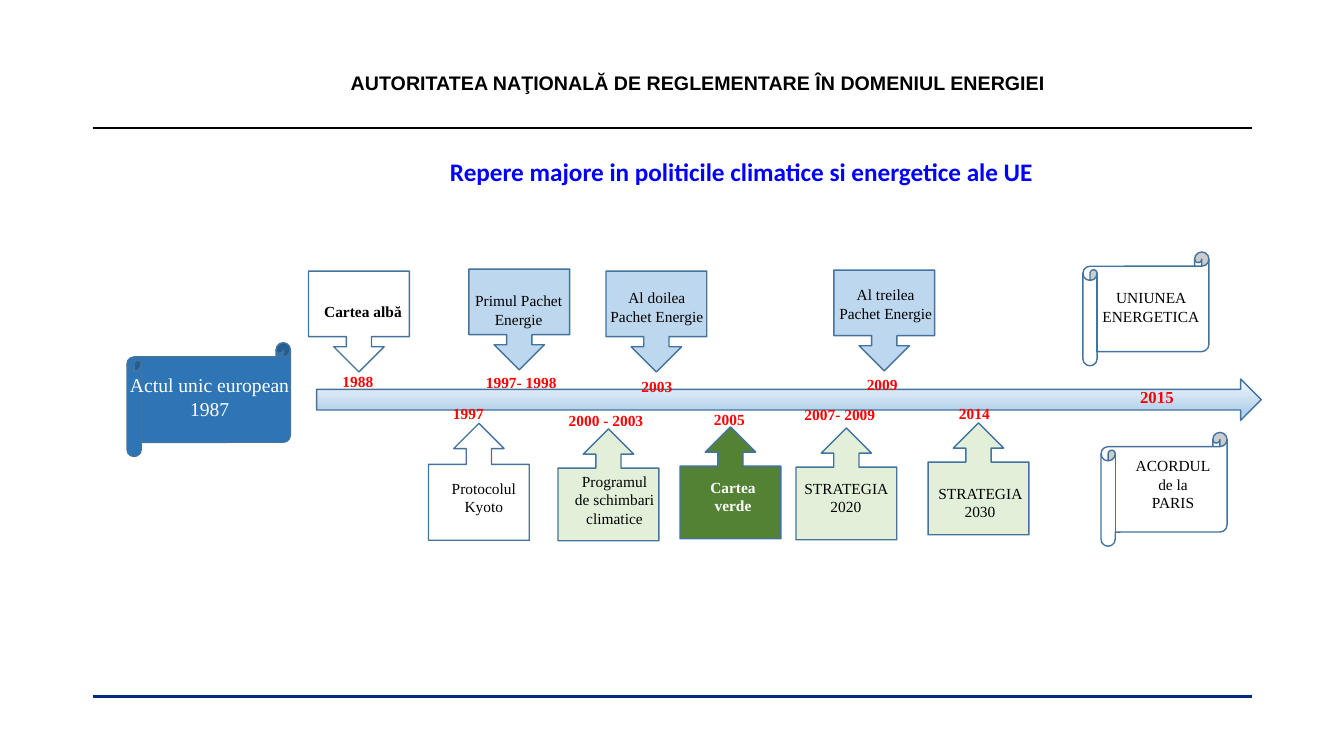
import pptx
import pptx.util
import pptx.dml.color
import pptx.enum.shapes
import pptx.enum.text
import pptx.oxml.ns
from lxml import etree

Inches = pptx.util.Inches
Pt = pptx.util.Pt
RGBColor = pptx.dml.color.RGBColor
KINDS = pptx.enum.shapes.MSO_SHAPE
ALIGN = pptx.enum.text.PP_ALIGN
qn = pptx.oxml.ns.qn

BLACK = RGBColor(0x00, 0x00, 0x00)
WHITE = RGBColor(0xFF, 0xFF, 0xFF)
RED = RGBColor(0xFF, 0x00, 0x00)
BLUE = RGBColor(0x00, 0x00, 0xFF)
NAVY = RGBColor(0x00, 0x2B, 0x7F)
EDGE = RGBColor(0x43, 0x73, 0x9E)
SKY = RGBColor(0xBD, 0xD7, 0xEE)
MINT = RGBColor(0xE2, 0xF0, 0xD9)
GREEN = RGBColor(0x54, 0x82, 0x35)
DEEP = RGBColor(0x2E, 0x75, 0xB6)

RULES = [(1.27, BLACK, 1), (6.91, NAVY, 2)]
DOWN, UP = 90, 270
CALLS = [
    (DOWN, 3.06, 2.69, 1, None),
    (DOWN, 4.65, 2.67, 1, SKY),
    (DOWN, 6.01, 2.69, 1, SKY),
    (DOWN, 8.27, 2.68, 1, SKY),
    (UP, 4.17, 4.28, 1.16, None),
    (UP, 5.48, 4.31, 1.11, MINT),
    (UP, 6.69, 4.29, 1.11, GREEN),
    (UP, 7.84, 4.3, 1.11, MINT),
    (UP, 9.15, 4.25, 1.11, MINT),
]
SCROLLS = [
    (1.26, 3.4, 1.62, DEEP),
    (10.74, 2.5, 1.25, WHITE),
    (10.92, 4.29, 1.25, WHITE),
]
AXIS = (3.14, 3.76, 9.37, 0.41)
STOPS = [(0, "F7FAFD"), (37, "D6E6F5"), (74, "B5D2EC"),
         (83, "B5D2EC"), (100, "CEE1F2")]

PLAIN = {"name": "Times New Roman", "size": Pt(11), "bold": False}
BOLD = {**PLAIN, "bold": True}
LARGE = {**PLAIN, "size": Pt(14)}
LAST = {**BOLD, "size": Pt(12)}
HEAD = {"name": "Arial", "size": Pt(14), "bold": True}
TITLE = {"name": "Calibri", "size": Pt(18), "bold": True}

LABELS = [
    ("Cartea albă", 3.09, 2.95, 1.02, BOLD, BLACK),
    ("Primul Pachet Energie", 4.56, 2.84, 1.17, PLAIN, BLACK),
    ("Al doilea\vPachet Energie", 5.93, 2.81, 1.17, PLAIN, BLACK),
    ("Al treilea\vPachet Energie", 8.2, 2.78, 1.17, PLAIN, BLACK),
    ("Protocolul Kyoto", 4.35, 4.7, 0.9, PLAIN, BLACK),
    ("Programul de schimbari climatice", 5.59, 4.63, 1.01, PLAIN, BLACK),
    ("Cartea verde", 6.76, 4.69, 1.02, BOLD, WHITE),
    ("STRATEGIA 2020", 7.83, 4.7, 1.12, PLAIN, BLACK),
    ("STRATEGIA 2030", 9.16, 4.75, 1.12, PLAIN, BLACK),
    ("UNIUNEA ENERGETICA", 10.83, 2.81, 1.17, PLAIN, BLACK),
    ("ACORDUL\nde la\nPARIS", 11.05, 4.48, 1.17, PLAIN, BLACK),
    ("Actul unic european\n1987", 1.08, 3.65, 2, LARGE, WHITE),
    ("1988", 3.04, 3.64, 1.02, BOLD, RED),
    ("1997- 1998", 4.66, 3.65, 1.02, BOLD, RED),
    ("2003", 6.1, 3.69, 0.83, BOLD, RED),
    ("2009", 8.24, 3.67, 1.02, BOLD, RED),
    ("1997", 4.24, 3.96, 0.81, BOLD, RED),
    ("2000 - 2003", 5.54, 4.03, 0.94, BOLD, RED),
    ("2005", 6.82, 4.02, 0.83, BOLD, RED),
    ("2007- 2009", 7.86, 3.97, 0.94, BOLD, RED),
    ("2014", 9.25, 3.96, 0.83, BOLD, RED),
    ("2015", 11.06, 3.79, 0.83, LAST, RED),
]


def draw(slide, kind, box, fill=None, turn=0):
    shape = slide.shapes.add_shape(kind, *map(Inches, box))
    shape.shadow.inherit = False
    shape.rotation = turn
    shape.line.color.rgb = EDGE
    shape.line.width = Pt(1)
    if fill is None:
        shape.fill.background()
    else:
        shape.fill.solid()
        shape.fill.fore_color.rgb = fill
    return shape


def shade(shape):
    shape.fill.gradient()
    shape.fill.gradient_angle = 270
    stops = shape.element.spPr.find(".//" + qn("a:gsLst"))
    for old in list(stops):
        stops.remove(old)
    for place, tone in STOPS:
        stop = etree.SubElement(stops, qn("a:gs"), pos=str(place * 1000))
        etree.SubElement(stop, qn("a:srgbClr"), val=tone)


def write(slide, text, left, top, width, style, color,
          align=ALIGN.CENTER, space=1.0):
    size = style["size"].pt
    lines = text.count("\n") + text.count("\v") + 1
    high = 0.1 + lines * size * 1.2 / 72
    box = slide.shapes.add_textbox(*map(Inches, (left, top, width, high)))
    frame = box.text_frame
    frame.word_wrap = True
    frame.text = text
    for para in frame.paragraphs:
        para.alignment = align
        para.line_spacing = space
        for run in para.runs:
            for key, value in style.items():
                setattr(run.font, key, value)
            run.font.color.rgb = color


def rule(slide, top, color, width):
    line = slide.shapes.add_connector(
        pptx.enum.shapes.MSO_CONNECTOR.STRAIGHT,
        Inches(0.92), Inches(top), Inches(12.42), Inches(top))
    line.line.color.rgb = color
    line.line.width = Pt(width)
    etree.SubElement(line.element.spPr, qn("a:effectLst"))


def main():
    deck = pptx.Presentation()
    deck.slide_width = Inches(13.33)
    deck.slide_height = Inches(7.5)
    slide = deck.slides.add_slide(deck.slide_layouts[6])
    for item in RULES:
        rule(slide, *item)
    for turn, left, top, length, fill in CALLS:
        draw(slide, KINDS.RIGHT_ARROW_CALLOUT, (left, top, length, 1), fill, turn)
    shade(draw(slide, KINDS.RIGHT_ARROW, AXIS))
    for left, top, width, fill in SCROLLS:
        draw(slide, KINDS.HORIZONTAL_SCROLL, (left, top, width, 1.13), fill)
    write(slide, "AUTORITATEA NAŢIONALĂ DE REGLEMENTARE ÎN DOMENIUL ENERGIEI",
          3.38, 0.65, 7.12, HEAD, BLACK, ALIGN.LEFT)
    write(slide, "Repere majore in politicile climatice si energetice ale UE",
          4.08, 1.54, 6.55, TITLE, BLUE, space=0.9)
    for label in LABELS:
        write(slide, *label)
    deck.save("out.pptx")


if __name__ == "__main__":
    main()
